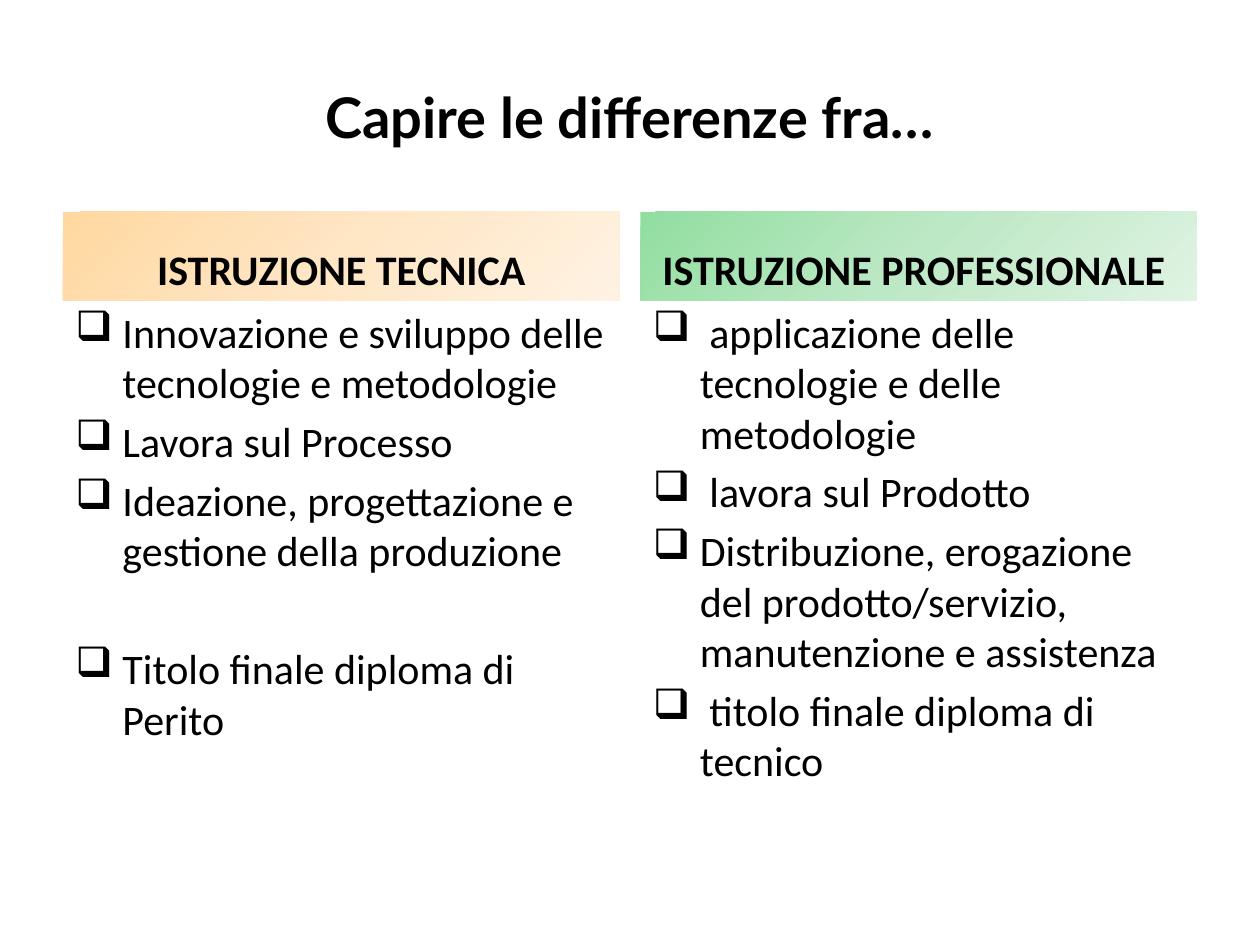
from copy import deepcopy
from dataclasses import dataclass

from pptx import Presentation
from pptx.dml.color import RGBColor
from pptx.enum.shapes import MSO_SHAPE as Preset
from pptx.enum.text import MSO_ANCHOR as Anchor, PP_ALIGN as Align
from pptx.oxml.ns import qn
from pptx.util import Cm, Pt


@dataclass(frozen=True)
class Theme:
    ink: str = "000000"
    orange: tuple = ("FFD8A0", "FFE6C5", "FFF2E3")
    green: tuple = ("91DEA0", "BDE8C5", "DFF3E3")
    title_font: str = "Lato"
    body_font: str = "Calibri"
    title_size: int = 32
    body_size: int = 24
    item_gap: float = 4.8
    section_gap: float = 38.6


THEME = Theme()
MARGIN, CONTENT_WIDTH, COLUMN_WIDTH = 1.27, 22.86, 11.22
HEADING_TOP, HEADING_HEIGHT, LIST_HEIGHT = 4.27, 1.78, 10.97
HANGING = Cm(0.95)

COLUMNS = [
    ("ISTRUZIONE TECNICA", THEME.orange, [
        ("Innovazione e sviluppo delle tecnologie e metodologie", 0),
        ("Lavora sul Processo", THEME.item_gap),
        ("Ideazione, progettazione e gestione della produzione", THEME.item_gap),
        ("Titolo finale diploma di Perito", THEME.section_gap),
    ]),
    ("ISTRUZIONE PROFESSIONALE ", THEME.green, [
        (" applicazione delle tecnologie e delle metodologie", 0),
        (" lavora sul Prodotto", THEME.item_gap),
        ("Distribuzione, erogazione del prodotto/servizio, manutenzione e assistenza",
         THEME.item_gap),
        (" titolo finale diploma di tecnico", THEME.item_gap),
    ]),
]


def style_runs(paragraph, font_name, size, bold=False):
    for run in paragraph.runs:
        run.font.name = font_name
        run.font.size = Pt(size)
        run.font.bold = bold
        run.font.color.rgb = RGBColor.from_string(THEME.ink)


def set_title(slide, wording):
    title = slide.shapes.title
    title.left, title.top = Cm(MARGIN), Cm(0.76)
    title.width, title.height = Cm(CONTENT_WIDTH), Cm(3.18)
    title.text_frame.text = wording
    title.text_frame.vertical_anchor = Anchor.MIDDLE
    heading = title.text_frame.paragraphs[0]
    heading.alignment = Align.CENTER
    style_runs(heading, THEME.title_font, THEME.title_size, bold=True)


def fill_gradient(shape, colours):
    shape.fill.gradient()
    shape.fill.gradient_angle = 315
    stop_list = shape._element.spPr.find(qn("a:gradFill")).find(qn("a:gsLst"))
    stop_list.insert(1, deepcopy(stop_list[0]))
    for index, (stop, colour) in enumerate(zip(shape.fill.gradient_stops, colours)):
        stop.position = index / (len(colours) - 1)
        stop.color.rgb = RGBColor.from_string(colour)


def add_heading(slide, left, wording, colours):
    band = slide.shapes.add_shape(Preset.RECTANGLE, Cm(left), Cm(HEADING_TOP),
                                  Cm(COLUMN_WIDTH), Cm(HEADING_HEIGHT))
    band.shadow.inherit = False
    band.line.fill.background()
    fill_gradient(band, colours)
    band.text_frame.text = wording
    band.text_frame.word_wrap = True
    band.text_frame.vertical_anchor = Anchor.BOTTOM
    heading = band.text_frame.paragraphs[0]
    heading.alignment = Align.CENTER
    style_runs(heading, THEME.body_font, THEME.body_size, bold=True)


def add_bullet(paragraph):
    properties = paragraph._p.get_or_add_pPr()
    properties.set("marL", str(HANGING))
    properties.set("indent", str(-HANGING))
    bullet = properties.makeelement(qn("a:buChar"), {"char": "❑"})
    properties.append(bullet)


def add_list(slide, left, items):
    box = slide.shapes.add_textbox(Cm(left), Cm(HEADING_TOP + HEADING_HEIGHT),
                                   Cm(COLUMN_WIDTH), Cm(LIST_HEIGHT))
    frame = box.text_frame
    frame.word_wrap = True
    for index, (wording, space_before) in enumerate(items):
        item = frame.add_paragraph() if index else frame.paragraphs[0]
        item.text = wording
        add_bullet(item)
        if space_before:
            item.space_before = Pt(space_before)
        style_runs(item, THEME.body_font, THEME.body_size)


def main():
    deck = Presentation()
    deck.slide_width, deck.slide_height = Cm(25.4), Cm(19.05)
    slide = deck.slides.add_slide(deck.slide_layouts[5])
    set_title(slide, "Capire le differenze fra…")
    for index, (heading, colours, items) in enumerate(COLUMNS):
        left = MARGIN + index * (CONTENT_WIDTH - COLUMN_WIDTH)
        add_heading(slide, left, heading, colours)
        add_list(slide, left, items)
    deck.save("out.pptx")


if __name__ == "__main__":
    main()
